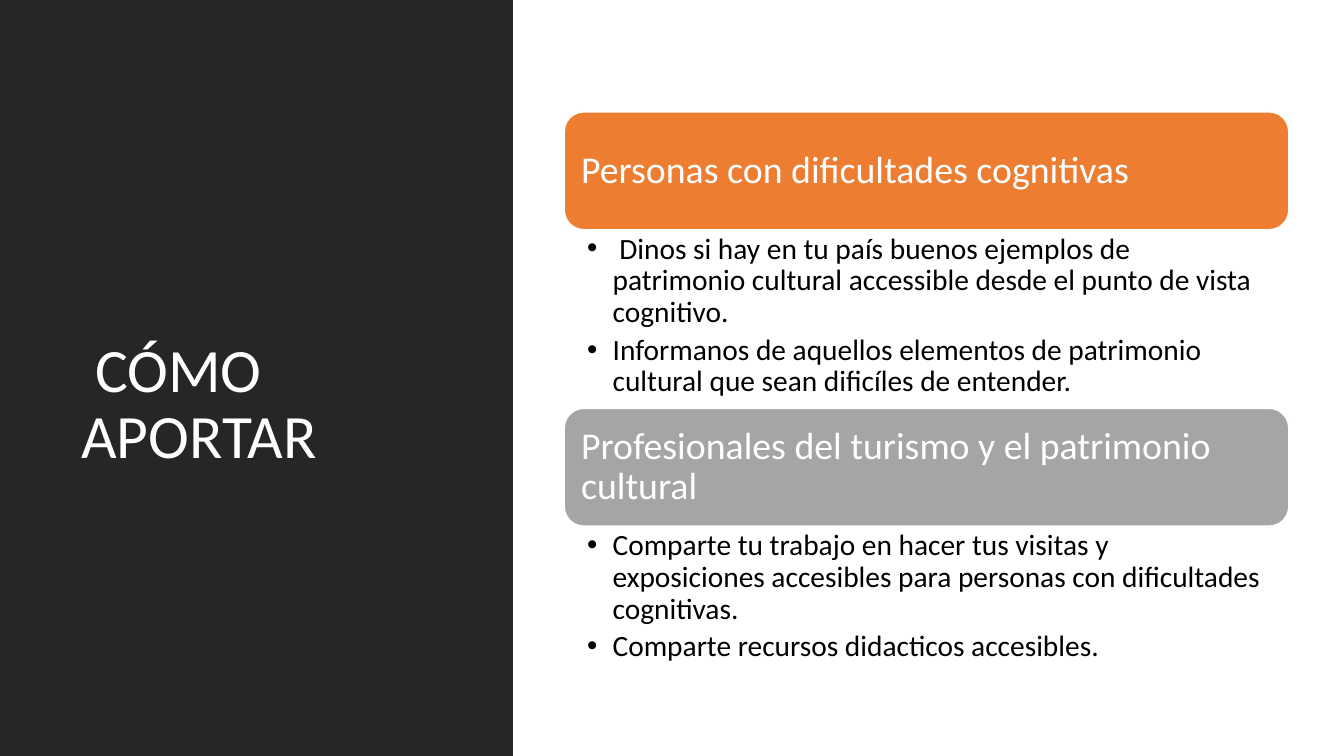
from pptx import Presentation, util as u
from pptx.dml.color import RGBColor
from pptx.enum import shapes, text
from pptx.oxml.ns import qn
from lxml import etree

TITLE = " CÓMO APORTAR"
# heading, heading colour, bullets, height of the bullet box in cm
GROUPS = [
    ("Personas con dificultades cognitivas", "orange", [
        " Dinos si hay en tu país buenos ejemplos de patrimonio cultural "
        "accessible desde el punto de vista cognitivo.",
        "Informanos de aquellos elementos de patrimonio cultural que sean "
        "dificíles de entender.",
    ], 4.5),
    ("Profesionales del turismo y el patrimonio cultural", "grey", [
        "Comparte tu trabajo en hacer tus visitas y exposiciones accesibles "
        "para personas con dificultades cognitivas.",
        "Comparte recursos didacticos accesibles.",
    ], 2.87),
]
COLOURS = {"dark": "262626", "orange": "ED7D31", "grey": "A5A5A5",
           "white": "FFFFFF", "black": "000000"}
FONT = "Calibri"
LEFT, TOP, WIDTH, HEADING_HEIGHT = 14.22, 2.82, 18.26, 2.97
PANEL_WIDTH = 12.93
INDENT = 0.64


def colour(name):
    return RGBColor.from_string(COLOURS[name])


def set_frame(frame, anchor, margins):
    """Margins are left, top, right, bottom in cm."""
    frame.word_wrap = True
    frame.auto_size = text.MSO_AUTO_SIZE.NONE
    frame.vertical_anchor = anchor
    (frame.margin_left, frame.margin_top,
     frame.margin_right, frame.margin_bottom) = map(u.Cm, margins)


def format_paragraph(para, size, colour_name, space_after=0):
    para.alignment = text.PP_ALIGN.LEFT
    para.line_spacing = 0.9
    para.space_after = u.Pt(space_after)
    for span in para.runs:
        span.font.name = FONT
        span.font.size = u.Pt(size)
        span.font.color.rgb = colour(colour_name)


def add_bullet(para):
    props = para._p.get_or_add_pPr()
    props.set("marL", str(u.Cm(INDENT)))
    props.set("indent", str(-u.Cm(INDENT)))
    etree.SubElement(props, qn("a:buFont")).set("typeface", "Arial")
    etree.SubElement(props, qn("a:buChar")).set("char", "•")


def add_panel(page, kind, left, top, width, height, fill):
    panel = page.shapes.add_shape(kind, *map(u.Cm, (left, top, width, height)))
    panel.shadow.inherit = False
    panel.fill.solid()
    panel.fill.fore_color.rgb = colour(fill)
    panel.line.fill.background()
    return panel


def add_heading(page, top, heading, fill):
    panel = add_panel(page, shapes.MSO_SHAPE.ROUNDED_RECTANGLE,
                      LEFT, top, WIDTH, HEADING_HEIGHT, fill)
    panel.line.color.rgb = colour("white")
    panel.line.width = u.Pt(1)
    set_frame(panel.text_frame, text.MSO_ANCHOR.MIDDLE, [0.28] * 4)
    panel.text_frame.text = heading
    format_paragraph(panel.text_frame.paragraphs[0], 27, "white")


def add_bullets(page, top, height, bullets):
    box = page.shapes.add_textbox(*map(u.Cm, (LEFT, top, WIDTH, height)))
    frame = box.text_frame
    set_frame(frame, text.MSO_ANCHOR.TOP, (0.58, 0.1, 0.53, 0.1))
    frame.text = "\n".join(bullets)
    for para in frame.paragraphs:
        para.level = 1
        add_bullet(para)
        format_paragraph(para, 21, "black", space_after=4.2)


def main():
    deck = Presentation()
    deck.slide_width, deck.slide_height = u.Cm(33.87), u.Cm(19.05)
    page = deck.slides.add_slide(deck.slide_layouts[5])

    side = add_panel(page, shapes.MSO_SHAPE.RECTANGLE,
                     0, 0, PANEL_WIDTH, 19.05, "dark")
    title = page.shapes.title
    title._element.addprevious(side._element)  # keeps the panel behind the title
    title.left, title.top, title.width, title.height = map(
        u.Cm, (1.8, 1.78, 9.37, 10.24))
    set_frame(title.text_frame, text.MSO_ANCHOR.BOTTOM, (0.25, 0.13, 0.25, 0.13))
    title.text_frame.text = TITLE
    format_paragraph(title.text_frame.paragraphs[0], 44, "white")

    top = TOP
    for heading, fill, bullets, height in GROUPS:
        add_heading(page, top, heading, fill)
        top += HEADING_HEIGHT
        add_bullets(page, top, height, bullets)
        top += height

    deck.save("out.pptx")


if __name__ == "__main__":
    main()
